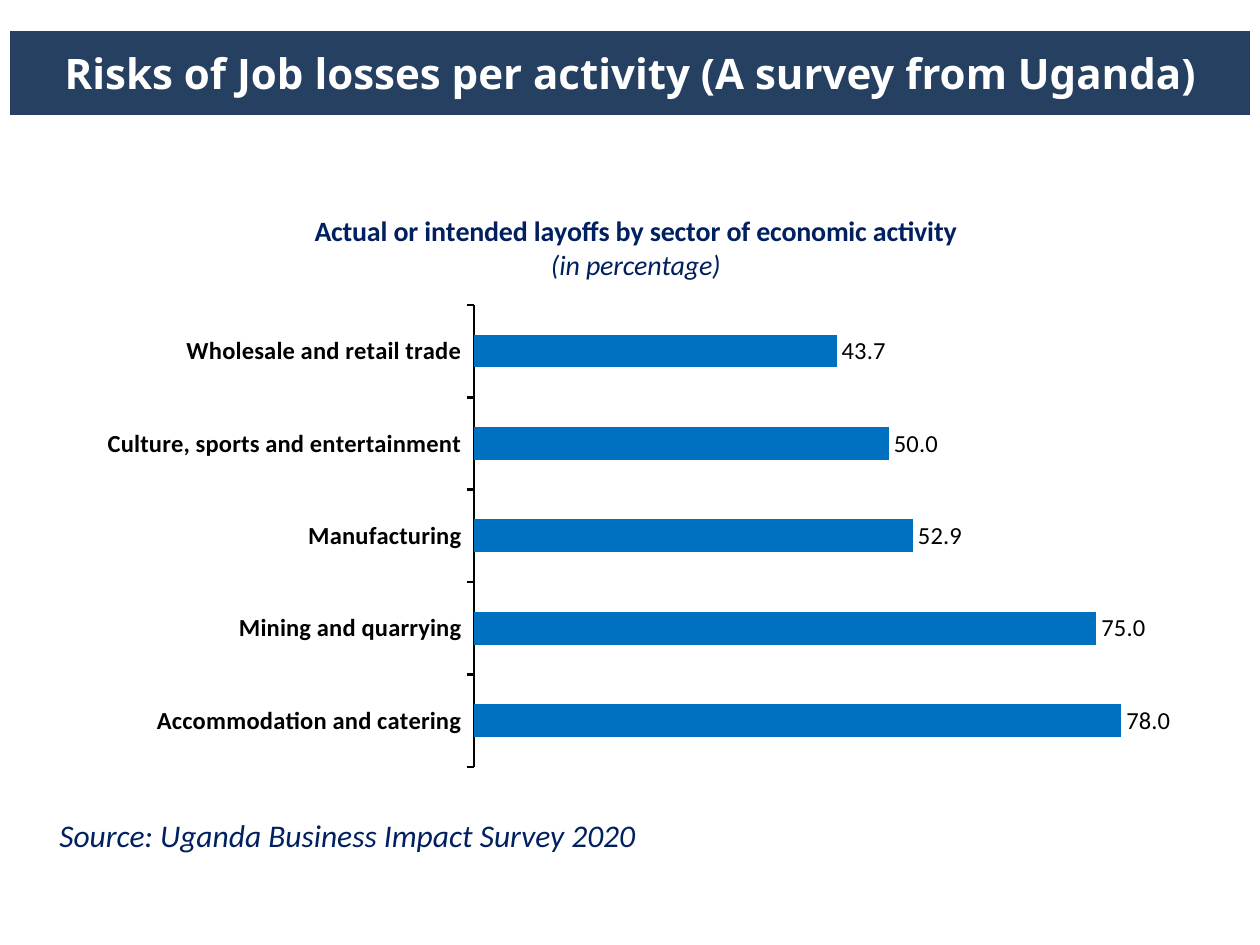
from lxml.etree import SubElement
from pptx import Presentation
from pptx.chart.data import CategoryChartData
from pptx.dml.color import RGBColor
from pptx.enum.chart import XL_CHART_TYPE as CT, XL_LABEL_POSITION as LP, XL_TICK_MARK as TM
from pptx.enum.text import MSO_ANCHOR, PP_ALIGN
from pptx.oxml import parse_xml
from pptx.oxml.ns import nsdecls, qn
from pptx.util import Emu, Pt

NAVY = RGBColor(0x25, 0x40, 0x61)
INK = RGBColor(0x00, 0x20, 0x60)
BLUE = RGBColor(0x00, 0x70, 0xC0)
BLACK = RGBColor(0, 0, 0)
WHITE = RGBColor(255, 255, 255)

LAYOFFS = {
    "Accommodation and catering": 78,
    "Mining and quarrying": 75,
    "Manufacturing": 52.9,
    "Culture, sports and entertainment": 50,
    "Wholesale and retail trade": 43.7,
}


def px(n):
    return Emu(round(n * 914400 / 126))


def style(font, size, color, bold=False, italic=False, name="Calibri"):
    font.size, font.bold, font.italic, font.name = Pt(size), bold, italic, name
    font.color.rgb = color


def set_layout(parent, index, **values):
    """Give a chart part a manual layout, as fractions of the chart."""
    for old in parent.findall(qn("c:layout")):
        parent.remove(old)
    layout = parse_xml(f"<c:layout {nsdecls('c')}/>")
    manual = SubElement(layout, qn("c:manualLayout"))
    for tag, value in values.items():
        SubElement(manual, qn(f"c:{tag}")).set("val", str(value))
    parent.insert(index, layout)


def add_banner(slide, text, x, y, w, h):
    title = slide.shapes.title
    title.left, title.top, title.width, title.height = map(px, (x, y, w, h))
    # Rounded outline for the title placeholder
    title._element.spPr.insert(1, parse_xml(
        f'<a:prstGeom {nsdecls("a")} prst="roundRect"><a:avLst/></a:prstGeom>'))
    title.fill.solid()
    title.fill.fore_color.rgb = NAVY
    tf = title.text_frame
    tf.text = text
    tf.word_wrap = True
    tf.vertical_anchor = MSO_ANCHOR.MIDDLE
    p = tf.paragraphs[0]
    p.alignment = PP_ALIGN.CENTER
    style(p.font, 24, WHITE, bold=True, name="Noto Sans")


def add_layoffs_chart(slide, x, y, w, h):
    data = CategoryChartData(number_format="0.0")
    data.categories = list(LAYOFFS)
    data.add_series("Series 1", list(LAYOFFS.values()))
    chart = slide.shapes.add_chart(CT.BAR_CLUSTERED, *map(px, (x, y, w, h)), data).chart
    style(chart.font, 14, BLACK)
    chart.has_legend = False

    # Two-line title
    tf = chart.chart_title.text_frame
    tf.text = "Actual or intended layoffs by sector of economic activity"
    style(tf.paragraphs[0].font, 16, INK, bold=True)
    p = tf.add_paragraph()
    p.text = "(in percentage)"
    style(p.font, 16, INK, italic=True)
    for p in tf.paragraphs:
        p.alignment = PP_ALIGN.CENTER
    chart.chart_title.include_in_layout = False
    set_layout(chart.chart_title._element, 1, xMode="edge", yMode="edge", x=0.22, y=0.04)

    # Axes
    cat_axis, val_axis = chart.category_axis, chart.value_axis
    cat_axis.major_tick_mark = TM.OUTSIDE
    cat_axis.format.line.color.rgb = BLACK
    cat_axis.format.line.width = Pt(1.5)
    style(cat_axis.tick_labels.font, 14, BLACK, bold=True)
    val_axis.minimum_scale, val_axis.maximum_scale = 0, 90
    val_axis.has_major_gridlines = False
    val_axis.visible = False

    # Bars and their values
    plot = chart.plots[0]
    plot.gap_width = 182
    plot.vary_by_categories = False
    bars = plot.series[0].format.fill
    bars.solid()
    bars.fore_color.rgb = BLUE
    labels = plot.series[0].data_labels
    labels.show_value = True
    labels.number_format, labels.number_format_is_linked = "0.0", False
    labels.position = LP.OUTSIDE_END
    style(labels.font, 14, BLACK)
    set_layout(chart._chartSpace.chart.plotArea, 0, layoutTarget="inner",
               xMode="edge", yMode="edge", x=0.36, y=0.2, w=0.64, h=0.77)


def add_source(slide, text, x, y, w, h):
    tf = slide.shapes.add_textbox(*map(px, (x, y, w, h))).text_frame
    tf.word_wrap = True
    tf.text = text
    style(tf.paragraphs[0].font, 18, INK, italic=True)


def main():
    prs = Presentation()
    prs.slide_width, prs.slide_height = px(1260), px(945)
    slide = prs.slides.add_slide(prs.slide_layouts[5])
    add_banner(slide, "Risks of Job losses per activity (A survey from Uganda)",
               10, 31, 1240, 84)
    add_source(slide, "Source: Uganda Business Impact Survey 2020", 47, 810, 663, 51)
    add_layoffs_chart(slide, 54, 185, 1167, 600)
    prs.save("out.pptx")


if __name__ == "__main__":
    main()
